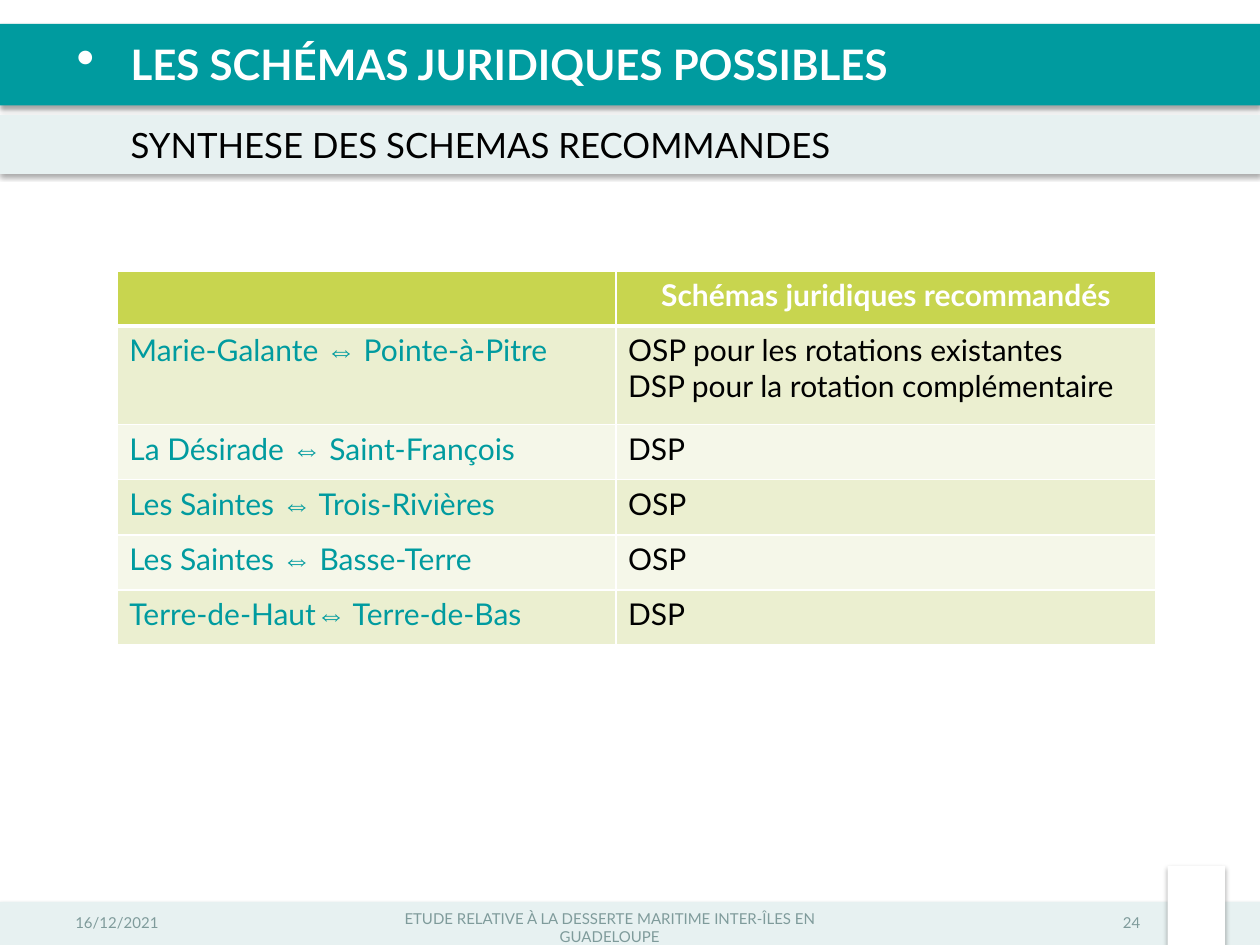
"""Build the slide on the recommended legal schemes for the ferry routes."""
from lxml.etree import SubElement
from pptx import Presentation
from pptx.dml.color import RGBColor
from pptx.enum.shapes import MSO_SHAPE
from pptx.enum.text import MSO_ANCHOR, PP_ALIGN
from pptx.oxml.ns import qn
from pptx.util import Inches, Pt

HUES = {"teal": "009B9F", "pale": "E7F1F1", "white": "FFFFFF", "black": "000000",
        "gray": "7F9B9B", "lime": "C8D54F", "dark": "EBEFD0", "light": "F5F7E9"}
WIDE, HIGH = 10.51, 7.88
BANDS = [((0, 95.43, 100, 4.57), "pale"), ((0, 2.54, 100, 8.63), "teal"),
         ((0, 12.18, 100, 6.22), "pale"), ((92.67, 91.62, 4.57, 8.38), "white")]
TITLE = "LES SCHÉMAS JURIDIQUES POSSIBLES"
THEME = "SYNTHESE DES SCHEMAS RECOMMANDES"
FOOT = [
    ("ETUDE RELATIVE À LA DESSERTE MARITIME INTER-ÎLES EN GUADELOUPE",
     (29.97, 96.57, 36.82, 3.17), PP_ALIGN.CENTER),
    ("16/12/2021", (5.04, 96.57, 22.45, 2.03), PP_ALIGN.LEFT),
    ("24", (68.98, 96.57, 22.45, 2.03), PP_ALIGN.RIGHT),
]
HEAD = "Schémas juridiques recommandés"
ARROW = "⇔"
ROUTES = [
    ("Marie-Galante ", " Pointe-à-Pitre",
     "OSP pour les rotations existantes\nDSP pour la rotation complémentaire"),
    ("La Désirade ", " Saint-François", "DSP"),
    ("Les Saintes ", " Trois-Rivières", "OSP"),
    ("Les Saintes ", " Basse-Terre", "OSP"),
    ("Terre-de-Haut", " Terre-de-Bas", "DSP"),
]
COLS = [39.58, 42.82]
ROWS = [5.84, 10.41] + [5.84] * 4


def across(part):
    return Inches(WIDE * part / 100)


def down(part):
    return Inches(HIGH * part / 100)


def place(area):
    left, top, width, height = area
    return across(left), down(top), across(width), down(height)


def paint(item, hue):
    item.fill.solid()
    item.fill.fore_color.rgb = RGBColor.from_string(HUES[hue])


def style(run, size, hue, bold=False, face="Lato"):
    run.font.name, run.font.size, run.font.bold = face, Pt(size), bold
    run.font.color.rgb = RGBColor.from_string(HUES[hue])


def add_band(slide, area, hue):
    band = slide.shapes.add_shape(MSO_SHAPE.RECTANGLE, *place(area))
    paint(band, hue)
    band.line.fill.background()
    band.shadow.inherit = False
    glow = SubElement(band._element.spPr.find(qn("a:effectLst")), qn("a:outerShdw"),
                      blurRad=str(Pt(3.1)), dist=str(Pt(1.8)), dir="5400000",
                      algn="t", rotWithShape="0")
    tint = SubElement(glow, qn("a:srgbClr"), val=HUES["black"])
    SubElement(tint, qn("a:alpha"), val="35000")


def add_text(slide, text, area, size, hue, bold=False):
    frame = slide.shapes.add_textbox(*place(area)).text_frame
    frame.word_wrap = True
    frame.text = text
    style(frame.paragraphs[0].runs[0], size, hue, bold)
    return frame


def add_bullet(line):
    props = line._p.get_or_add_pPr()
    props.set("marL", str(Inches(0.45)))
    props.set("indent", str(-Inches(0.45)))
    SubElement(props, qn("a:buSzPct"), val="125000")
    SubElement(props, qn("a:buChar"), char="•")


def add_edges(cell, top, base):
    props = cell._tc.get_or_add_tcPr()
    for side, width in zip("LRTB", (0.96, 0.96, top, base)):
        edge = SubElement(props, qn(f"a:ln{side}"), w=str(Pt(width)))
        fill = SubElement(edge, qn("a:solidFill"))
        SubElement(fill, qn("a:srgbClr"), val=HUES["white"])


def add_grid(slide):
    area = (9.32, 28.68, sum(COLS), sum(ROWS))
    grid = slide.shapes.add_table(len(ROWS), len(COLS), *place(area)).table
    for col, width in zip(grid.columns, COLS):
        col.width = across(width)
    for row, height in zip(grid.rows, ROWS):
        row.height = down(height)
    for num, row in enumerate(grid.rows):
        hue = "lime" if num == 0 else ("light", "dark")[num % 2]
        for cell in row.cells:
            add_edges(cell, 3 if num == 1 else 0.96, 3 if num == 0 else 0.96)
            paint(cell, hue)
    top = grid.cell(0, 1).text_frame
    top.text = HEAD
    top.paragraphs[0].alignment = PP_ALIGN.CENTER
    style(top.paragraphs[0].runs[0], 18, "white", True)
    for num, (start, end, scheme) in enumerate(ROUTES, 1):
        line = grid.cell(num, 0).text_frame.paragraphs[0]
        for part, face in ((start, "Lato"), (ARROW, "Arial"), (end, "Lato")):
            run = line.add_run()
            run.text = part
            style(run, 18, "teal", face=face)
        frame = grid.cell(num, 1).text_frame
        frame.text = scheme
        for line in frame.paragraphs:
            style(line.runs[0], 18, "black")


def main():
    deck = Presentation()
    deck.slide_width, deck.slide_height = Inches(WIDE), Inches(HIGH)
    slide = deck.slides.add_slide(deck.slide_layouts[6])
    for area, hue in BANDS:
        add_band(slide, area, hue)
    title = add_text(slide, TITLE, (5.04, 3.3, 94.96, 6.22), 25.2, "white", True)
    add_bullet(title.paragraphs[0])
    theme = add_text(slide, THEME, (9.32, 11.42, 81.83, 6.85), 20.9, "black")
    theme.paragraphs[0].line_spacing = 1.2
    theme.paragraphs[0].space_before = Pt(4.3)
    for frame in (title, theme):
        frame.margin_left = frame.margin_right = Inches(0.11)
        frame.margin_top = frame.margin_bottom = Inches(0.06)
    for text, area, align in FOOT:
        frame = add_text(slide, text, area, 9, "gray")
        frame.vertical_anchor = MSO_ANCHOR.MIDDLE
        frame.paragraphs[0].alignment = align
    add_grid(slide)
    deck.save("out.pptx")


if __name__ == "__main__":
    main()
